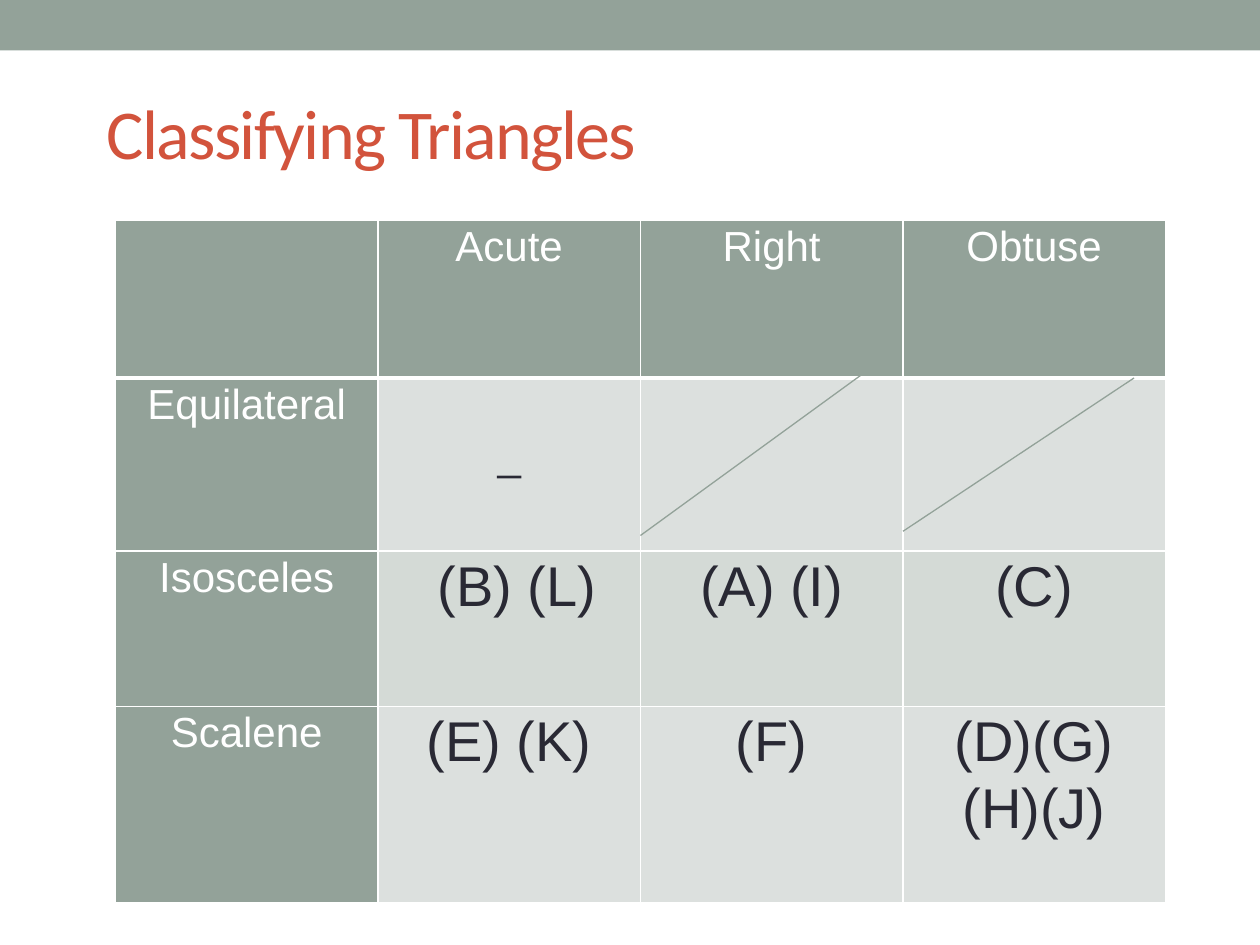
from dataclasses import dataclass

from pptx import Presentation
from pptx.dml.color import RGBColor as Rgb
from pptx.enum.shapes import MSO_CONNECTOR as Connector, MSO_SHAPE as Shape
from pptx.enum.text import MSO_ANCHOR as Anchor, PP_ALIGN as Align
from pptx.oxml.ns import qn
from pptx.util import Inches, Pt
from lxml.etree import SubElement


@dataclass(frozen=True)
class Theme:
    sage: str = "93A299"
    band_light: str = "DCE0DE"
    band_dark: str = "D4DAD6"
    ink: str = "292934"
    white: str = "FFFFFF"
    accent: str = "D2533C"
    title_font: str = "Calibri"
    body_font: str = "Arial"
    title_size: int = 40
    label_size: int = 24
    entry_size: int = 32


class SlideBuilder:
    """Draws on a grid of 120 columns by 90 rows, twelve to the inch."""

    def __init__(self, slide, theme):
        self.slide, self.theme = slide, theme

    def grid(self, *units):
        return [Inches(unit / 12) for unit in units]

    def style(self, paragraph, font_name, size, color):
        font = paragraph.font
        font.name, font.size, font.bold = font_name, Pt(size), False
        font.color.rgb = Rgb.from_string(color)

    def banner(self, *box):
        band = self.slide.shapes.add_shape(Shape.RECTANGLE, *self.grid(*box))
        band.shadow.inherit = False
        band.fill.solid()
        band.fill.fore_color.rgb = Rgb.from_string(self.theme.sage)
        band.line.fill.background()

    def title(self, text, *box):
        frame = self.slide.shapes.add_textbox(*self.grid(*box)).text_frame
        frame.word_wrap = True
        frame.vertical_anchor = Anchor.MIDDLE
        heading = frame.paragraphs[0]
        heading.text = text
        self.style(heading, self.theme.title_font, self.theme.title_size, self.theme.accent)
        heading._p.pPr.find(qn("a:defRPr")).set("spc", "-100")

    def strike(self, *ends):
        """Cross out an impossible combination."""
        line = self.slide.shapes.add_connector(Connector.STRAIGHT, *self.grid(*ends))
        line.line.color.rgb = Rgb.from_string(self.theme.sage)
        line.line.width = Pt(0.75)
        SubElement(line._element.spPr, qn("a:effectLst"))

    def borders(self, cell, bottom):
        properties = cell._tc.get_or_add_tcPr()
        for index, (side, width) in enumerate((("L", 1), ("R", 1), ("T", 1), ("B", bottom))):
            edge = properties.makeelement(qn(f"a:ln{side}"), {"w": str(Pt(width))})
            fill = SubElement(edge, qn("a:solidFill"))
            SubElement(fill, qn("a:srgbClr"), val=self.theme.white)
            properties.insert(index, edge)

    def cell(self, cell, text, fill, size, color, bottom=1):
        cell.fill.solid()
        cell.fill.fore_color.rgb = Rgb.from_string(fill)
        self.borders(cell, bottom)
        cell.margin_left = cell.margin_right = Inches(0.08)
        cell.margin_top = cell.margin_bottom = 0
        cell.text = text
        for paragraph in cell.text_frame.paragraphs:
            paragraph.alignment = Align.CENTER
            paragraph.line_spacing = 1.07
            self.style(paragraph, self.theme.body_font, size, color)

    def matrix(self, rows, heights, left, top, column_width):
        theme = self.theme
        columns = len(rows[0])
        box = self.grid(left, top, column_width * columns, sum(heights))
        table = self.slide.shapes.add_table(len(rows), columns, *box).table
        table.first_row = table.horz_banding = False
        for row, height in zip(table.rows, self.grid(*heights)):
            row.height = height
        for r, row in enumerate(rows):
            band = theme.band_light if r % 2 else theme.band_dark
            for c, text in enumerate(row):
                if r == 0 or c == 0:
                    look = theme.sage, theme.label_size, theme.white
                else:
                    size = theme.label_size if text == "_" else theme.entry_size
                    look = band, size, theme.ink
                self.cell(table.cell(r, c), text, *look, bottom=1 if r else 3)
        return table


def main():
    deck = Presentation()
    deck.slide_width, deck.slide_height = Inches(10), Inches(7.5)
    builder = SlideBuilder(deck.slides.add_slide(deck.slide_layouts[6]), Theme())

    # Top band
    builder.banner(0, 0, 120, 4.8)

    # Classification table: sides down, angles across
    triangles = [
        ("", "Acute", "Right", "Obtuse"),
        ("Equilateral", "_", "", ""),
        ("Isosceles", " (B) (L)", "(A) (I)", "(C)"),
        ("Scalene", "(E) (K)", "(F)", "(D)(G)\n(H)(J)"),
    ]
    table = builder.matrix(triangles, (15, 16.5, 14.8, 18.7), left=11, top=21, column_width=25)
    table.cell(1, 1).margin_top = Inches(0.41)  # the blank to fill in sits one line down

    # Equilateral triangles are never right or obtuse
    builder.strike(61, 51, 83, 35)
    builder.strike(86, 50.6, 108, 36)

    # Title
    builder.title("Classifying Triangles", 9, 6, 105, 13)

    deck.save("out.pptx")


if __name__ == "__main__":
    main()
